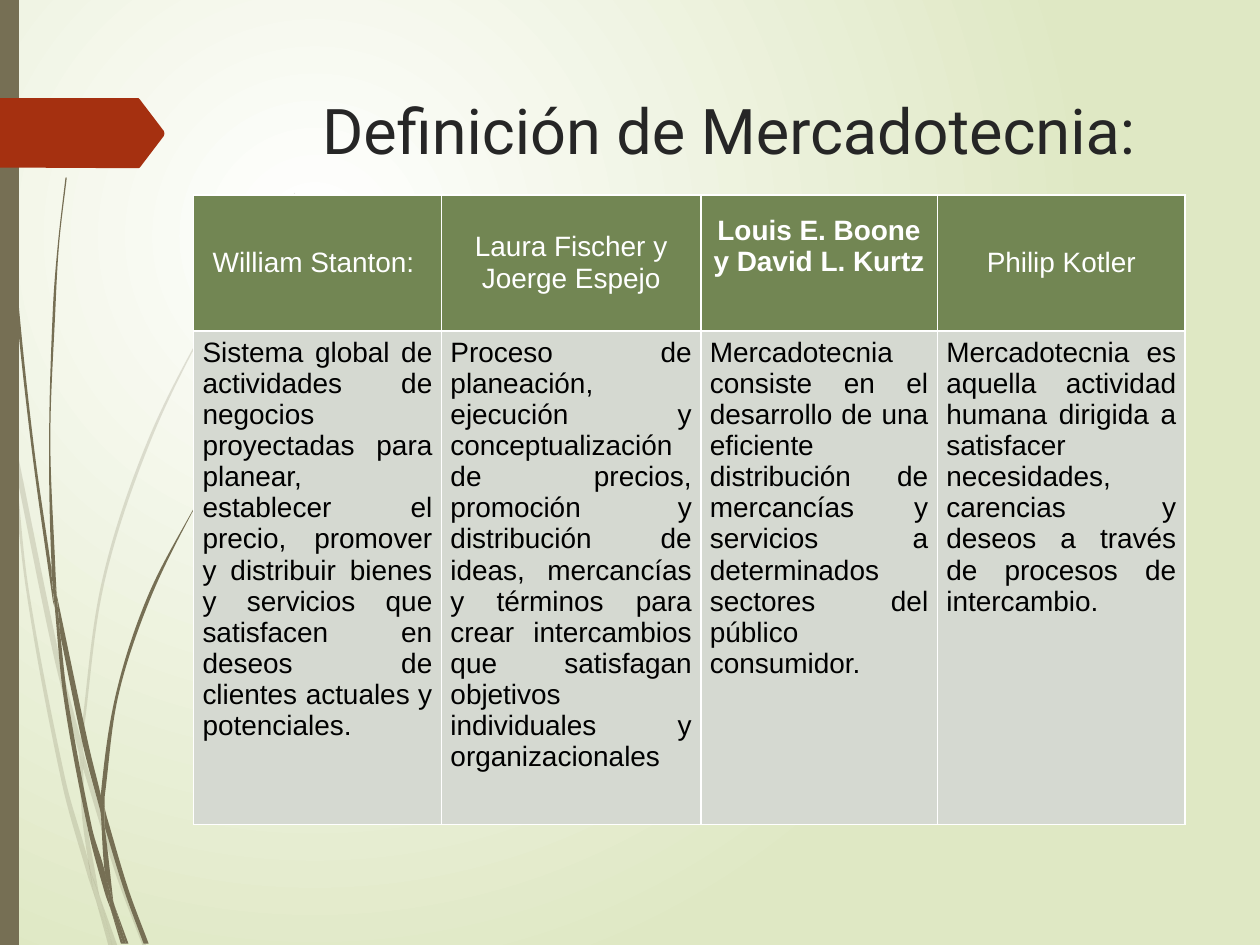
"""Build a slide that compares four definitions of marketing in a table."""
import math

import lxml.etree
import pptx
import pptx.dml.color
import pptx.enum.shapes
import pptx.enum.text
import pptx.oxml.ns
import pptx.util

COLORS = {
    "white": "FFFFFF", "black": "000000", "title": "262626", "mist": "DFE8C4",
    "stem": "766F54", "tab": "A53010", "header": "728653", "body": "D5D9D1",
}
SLIDE_WIDTH, SLIDE_HEIGHT = pptx.util.Inches(10), pptx.util.Inches(7.5)
GRID_COLUMNS, GRID_ROWS = 1000, 750
ALIGN = pptx.enum.text.PP_ALIGN
ANCHOR = pptx.enum.text.MSO_ANCHOR

COLUMN_WIDTHS = [196.8, 205.9, 187.7, 196.8]
ROW_HEIGHTS = [108, 392]
DEFINITIONS = [
    ("William Stanton: ",
     "Sistema global de actividades de negocios proyectadas para planear, establecer el precio, "
     "promover y distribuir bienes y servicios que satisfacen en deseos de clientes actuales y "
     "potenciales."),
    ("Laura Fischer y Joerge Espejo",
     "Proceso de planeación, ejecución y conceptualización de precios, promoción y distribución "
     "de ideas, mercancías y términos para crear intercambios que satisfagan objetivos "
     "individuales y organizacionales"),
    ("Louis E. Boone y David L. Kurtz",
     "Mercadotecnia consiste en el desarrollo de una eficiente distribución de mercancías y "
     "servicios a determinados sectores del público consumidor."),
    ("Philip Kotler",
     "Mercadotecnia es aquella actividad humana dirigida a satisfacer necesidades, carencias y "
     "deseos a través de procesos de intercambio."),
]
BOLD_AUTHOR = 2

PALE_BLADES = [
    ([(8, 350), (6, 322), (0, 282)], [(0, 299), (8, 344)]),
    ([(13, 376), (43, 522), (63, 599)], [(64, 586), (47, 520), (11, 345)]),
    ([(66, 610), (92, 694), (113, 750)], [(116, 750), (95, 692), (69, 607), (66, 596)]),
    ([(79, 711), (89, 750)], [(93, 750)]),
    ([(8, 350), (21, 470), (49, 621), (69, 693), (76, 714)],
     [(74, 707), (70, 683), (52, 619), (23, 469), (13, 376)]),
    ([(63, 599), (65, 646), (70, 683), (72, 692), (79, 711)],
     [(78, 706), (68, 646), (66, 610), (66, 608)]),
    ([(234, 153), (217, 175), (201, 197), (171, 244), (118, 348), (81, 461), (64, 584),
      (64, 586), (66, 596)],
     [(66, 584), (83, 462), (120, 349), (171, 245), (201, 198), (217, 175), (234, 154)]),
    ([(76, 714), (86, 750)], [(89, 750)]),
    ([(66, 608), (66, 596)], [(64, 586), (63, 599)]),
    ([(70, 683), (74, 707), (76, 714), (89, 750)], [(79, 711), (72, 692)]),
]
DARK_BLADES = [
    ([(2, 0), (3, 48), (5, 110), (12, 233), (25, 355), (42, 477), (43, 481)],
     [(41, 457), (41, 453), (27, 355), (14, 232), (6, 109), (3, 48), (3, 0)]),
    ([(48, 505), (66, 592), (80, 645)], [(80, 633), (80, 631), (70, 590), (45, 472)]),
    ([(83, 656), (99, 708), (114, 749)], [(118, 749), (102, 706), (85, 649), (83, 641)]),
    ([(43, 477), (51, 557), (70, 659), (83, 708), (88, 722)],
     [(87, 717), (83, 691), (73, 657), (54, 556), (48, 505)]),
    ([(52, 141), (46, 193), (42, 245), (39, 349), (41, 449), (45, 472)],
     [(44, 453), (40, 349), (44, 245), (47, 193), (53, 141)]),
    ([(91, 719), (100, 749)], [(102, 749)]),
    ([(41, 449), (41, 453), (43, 477), (48, 505)], [(45, 472)]),
    ([(195, 344), (184, 358), (173, 373), (153, 405), (117, 474), (92, 551), (80, 631),
      (83, 641)],
     [(83, 633), (94, 552), (119, 476), (153, 406), (173, 374), (184, 359), (196, 344)]),
    ([(88, 722), (96, 749)], [(98, 749)]),
    ([(80, 645), (83, 691), (87, 706), (91, 719)], [(90, 716), (83, 656), (81, 651)]),
    ([(80, 631), (80, 645), (81, 651), (83, 656)], [(83, 641)]),
    ([(83, 691), (87, 717), (88, 722), (98, 749)], [(100, 749), (91, 719), (87, 706)]),
]
TAB_OUTLINE = [(0, 78), (110, 78), (111, 79), (130, 104), (130.5, 106), (130, 108),
               (111, 133), (110, 133.5), (102, 133.5), (0, 133)]


def across(columns):
    """Return the length of a number of grid columns."""
    return round(columns * SLIDE_WIDTH / GRID_COLUMNS)


def down(rows):
    """Return the length of a number of grid rows."""
    return round(rows * SLIDE_HEIGHT / GRID_ROWS)


def color(name):
    """Return a named colour."""
    return pptx.dml.color.RGBColor.from_string(COLORS[name])


def child(parent, tag, **attributes):
    """Add a DrawingML child element."""
    return lxml.etree.SubElement(parent, pptx.oxml.ns.qn(tag), **attributes)


def paint(shape, fill, opacity=100):
    """Give a shape a flat fill without line or shadow."""
    shape.shadow.inherit = False
    shape.fill.solid()
    shape.fill.fore_color.rgb = color(fill)
    shape.line.fill.background()
    if opacity < 100:
        tone = next(shape.element.iter(pptx.oxml.ns.qn("a:srgbClr")))
        child(tone, "a:alpha", val=str(opacity * 1000))


def write(frame, text, size, font, ink, align, bold=False):
    """Write one formatted paragraph into a text frame."""
    frame.word_wrap = True
    paragraph = frame.paragraphs[0]
    paragraph.alignment = align
    run = paragraph.add_run()
    run.text = text
    run.font.size, run.font.name, run.font.bold = pptx.util.Pt(size), font, bold
    run.font.color.rgb = color(ink)


def tangent(points, index):
    """Return the unit direction of a curve at one of its points."""
    before, after = points[max(index - 1, 0)], points[min(index + 1, len(points) - 1)]
    length = math.dist(before, after)
    return [(end - start) / length for start, end in zip(before, after)]


def bend(outline, edge_lengths):
    """Turn the line segments within each edge of an outline into curves."""
    nodes = list(outline)[:-1]
    corners = [(int(node[0].get("x")), int(node[0].get("y"))) for node in nodes]
    first = 0
    for length in edge_lengths:
        points = corners[first:first + length]
        for index, (start, end) in enumerate(zip(points, points[1:])):
            reach = math.dist(start, end) / 3
            leave, arrive = tangent(points, index), tangent(points, index + 1)
            controls = [[a + reach * b for a, b in zip(start, leave)],
                        [a - reach * b for a, b in zip(end, arrive)], end]
            curve = child(outline, "a:cubicBezTo")
            for x, y in controls:
                child(curve, "a:pt", x=str(round(x)), y=str(round(y)))
            outline.replace(nodes[first + index + 1], curve)
        first += length


def add_outline(shapes, points, fill, opacity=100):
    """Add a closed outline given in grid units."""
    corners = [(across(x), down(y)) for x, y in points]
    builder = shapes.build_freeform(*corners[0])
    builder.add_line_segments(corners[1:], close=True)
    shape = builder.convert_to_shape()
    paint(shape, fill, opacity)
    return shape


def add_blades(slide, blades, opacity):
    """Add a group of grass blades, each made of two curved edges."""
    group = slide.shapes.add_group_shape()
    for outward, back in blades:
        blade = add_outline(group.shapes, outward + back, "stem", opacity)
        outline = next(blade.element.iter(pptx.oxml.ns.qn("a:path")))
        bend(outline, (len(outward), len(back)))


def set_background(slide):
    """Fill the background with a round gradient."""
    fill = slide.background.fill
    fill.gradient()
    for stop, name, position in zip(fill.gradient_stops, ("white", "mist"), (0, 1)):
        stop.color.rgb, stop.position = color(name), position
    gradient = next(slide.element.iter(pptx.oxml.ns.qn("a:gradFill")))
    gradient.remove(gradient.find(pptx.oxml.ns.qn("a:lin")))
    circle = child(gradient, "a:path", path="circle")
    child(circle, "a:fillToRect", l="50000", t="50000", r="100000", b="100000")


def format_cell(cell, fill):
    """Set the margins, white borders and fill of a cell."""
    cell.margin_left = cell.margin_right = across(7.2)
    cell.margin_top = cell.margin_bottom = down(5)
    properties = cell._tc.get_or_add_tcPr()
    for side in "LRTB":
        line = child(properties, f"a:ln{side}", w=str(pptx.util.Pt(1)))
        child(child(line, "a:solidFill"), "a:srgbClr", val=COLORS["white"])
    cell.fill.solid()
    cell.fill.fore_color.rgb = color(fill)


def add_definitions(slide):
    """Add the table with one author and definition per column."""
    table = slide.shapes.add_table(
        len(ROW_HEIGHTS), len(COLUMN_WIDTHS), across(153.6), down(154.6),
        across(sum(COLUMN_WIDTHS)), down(sum(ROW_HEIGHTS))).table
    table.first_row = table.horz_banding = False
    for row, height in zip(table.rows, ROW_HEIGHTS):
        row.height = down(height)
    for index, (author, definition) in enumerate(DEFINITIONS):
        table.columns[index].width = across(COLUMN_WIDTHS[index])
        header, body = table.cell(0, index), table.cell(1, index)
        format_cell(header, "header")
        format_cell(body, "body")
        header.vertical_anchor = ANCHOR.MIDDLE
        write(header.text_frame, author, 16, "Arial", "white", ALIGN.CENTER, index == BOLD_AUTHOR)
        write(body.text_frame, definition, 16, "Arial", "black", ALIGN.JUSTIFY)
    table.cell(0, BOLD_AUTHOR).margin_bottom = down(31)


def main():
    """Build and save the slide."""
    presentation = pptx.Presentation()
    presentation.slide_width, presentation.slide_height = SLIDE_WIDTH, SLIDE_HEIGHT
    slide = presentation.slides.add_slide(presentation.slide_layouts[5])
    set_background(slide)
    add_blades(slide, PALE_BLADES, 20)
    add_blades(slide, DARK_BLADES, 100)
    bar = slide.shapes.add_shape(
        pptx.enum.shapes.MSO_SHAPE.RECTANGLE, 0, 0, across(15), SLIDE_HEIGHT)
    paint(bar, "stem")
    add_outline(slide.shapes, TAB_OUTLINE, "tab")
    title = slide.shapes.title
    title.left, title.top, title.width, title.height = across(213), down(68), across(731), down(70)
    title.text_frame.vertical_anchor = ANCHOR.MIDDLE
    write(title.text_frame, "Definición de Mercadotecnia:", 36, "Roboto", "title", ALIGN.CENTER)
    add_definitions(slide)
    presentation.save("out.pptx")


if __name__ == "__main__":
    main()
